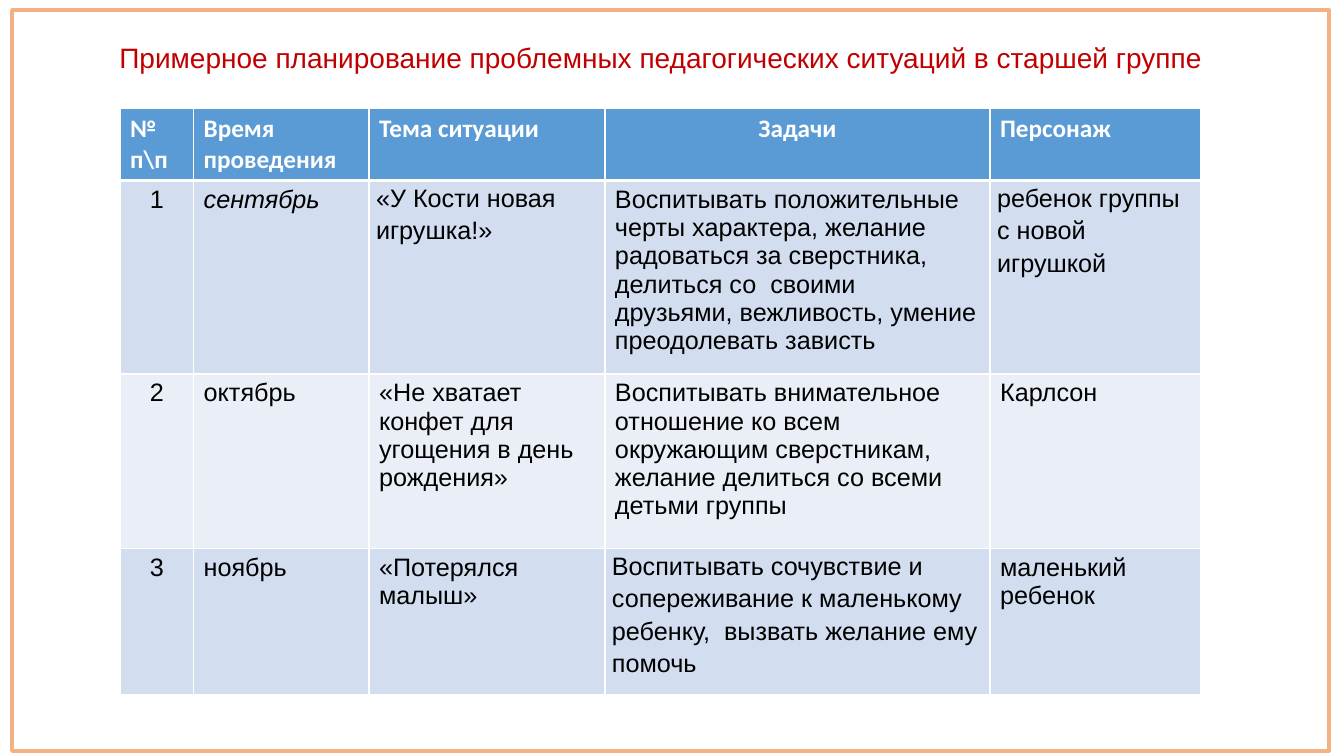
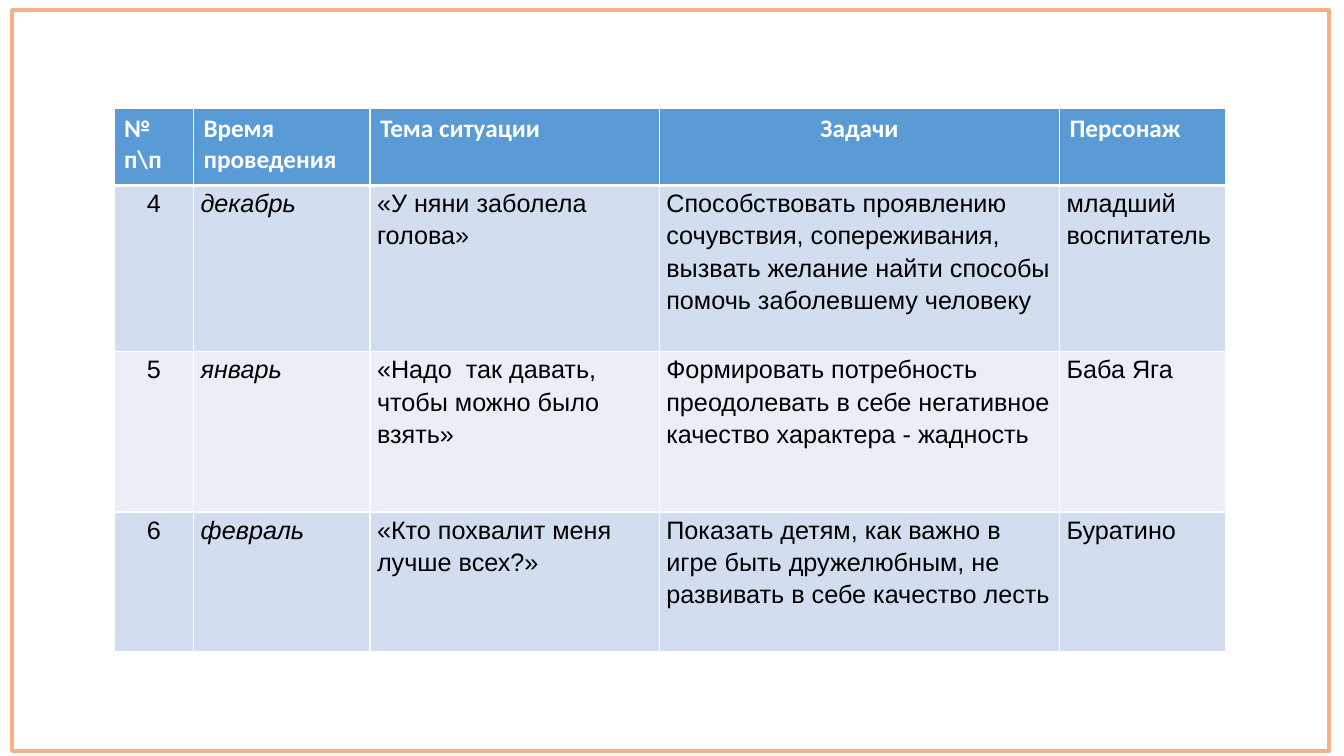
from lxml.etree import SubElement
from pptx import Presentation
from pptx.dml.color import RGBColor
from pptx.enum.shapes import MSO_SHAPE
from pptx.enum.text import MSO_ANCHOR, PP_ALIGN
from pptx.oxml.ns import qn
from pptx.util import Pt

PX = 9144  # 100 px to the inch
TITLE_ONLY, BLANK = 5, 6

WHITE = RGBColor(0xFF, 0xFF, 0xFF)
BLACK = RGBColor(0x00, 0x00, 0x00)
RED = RGBColor(0xC0, 0x00, 0x00)
PEACH = RGBColor(0xF4, 0xB1, 0x83)
HEADER_BLUE = RGBColor(0x5B, 0x9B, 0xD5)
BANDS = [RGBColor(0xD2, 0xDE, 0xEF), RGBColor(0xEA, 0xEF, 0xF7)]

FRAME = (12, 10, 1306, 735)
TITLE_BOX = (102, 35, 1107, 74)
NORMAL_INSETS = (10, 5, 10, 5)
LOOSE_INSETS = (7, 0, 7, 0)
LOOSE_SPACING = 1.15

HEADER = ["№ п\\п", "Время проведения", "Тема ситуации", "Задачи", "Персонаж"]
NUMBER, MONTH, TOPIC, GOALS, CHARACTER = range(len(HEADER))

# "loose" holds the (row, column) cells with wider line spacing and narrower insets
PLANS = [
    {
        "title": "Примерное планирование проблемных педагогических ситуаций в старшей группе",
        "left": 119, "top": 108,
        "columns": [73, 174, 234, 382, 209],
        "rows": [70, 192, 173, 145],
        "italic_rows": {1},
        "loose": {(1, TOPIC), (1, CHARACTER), (3, GOALS)},
        "situations": [
            ("1", "сентябрь", "«У Кости новая игрушка!»",
             "Воспитывать положительные черты характера, желание радоваться за сверстника, "
             "делиться со  своими друзьями, вежливость, умение преодолевать зависть",
             "ребенок группы с новой игрушкой"),
            ("2", "октябрь", "«Не хватает конфет для угощения в день рождения»",
             "Воспитывать внимательное отношение ко всем окружающим сверстникам, "
             "желание делиться со всеми детьми группы",
             "Карлсон"),
            ("3", "ноябрь", "«Потерялся малыш»",
             "Воспитывать сочувствие и сопереживание к маленькому ребенку,  "
             "вызвать желание ему помочь",
             "маленький ребенок"),
        ],
    },
    {
        "title": None,
        "left": 113, "top": 108,
        "columns": [79, 175, 287, 397, 165],
        "rows": [76, 165, 159, 138],
        "italic_rows": {1, 2, 3},
        "loose": {(row, column) for row in (1, 2, 3) for column in range(len(HEADER))},
        "situations": [
            ("4", "декабрь", "«У няни заболела голова»",
             "Способствовать проявлению сочувствия, сопереживания, вызвать желание "
             "найти способы помочь заболевшему человеку",
             "младший воспитатель"),
            ("5", "январь", "«Надо  так давать, чтобы можно было взять»",
             "Формировать потребность преодолевать в себе негативное качество "
             "характера - жадность",
             "Баба Яга"),
            ("6", "февраль", "«Кто похвалит меня лучше всех?»",
             "Показать детям, как важно в игре быть дружелюбным, не развивать "
             "в себе качество лесть",
             "Буратино"),
        ],
    },
]


def emu(lengths):
    return [length * PX for length in lengths]


def style_font(font, name, size, color):
    font.name, font.size, font.color.rgb = name, Pt(size), color


def add_borders(cell, row):
    """Draw white cell edges, with a thick line between header and body."""
    thick_edge = {0: "lnB", 1: "lnT"}.get(row)
    for edge in ("lnL", "lnR", "lnT", "lnB"):
        width = Pt(3 if edge == thick_edge else 1)
        line = SubElement(cell._tc.get_or_add_tcPr(), qn(f"a:{edge}"), w=str(width))
        fill = SubElement(line, qn("a:solidFill"))
        SubElement(fill, qn("a:srgbClr"), val=str(WHITE))


def fill_cell(cell, text, row, column, plan):
    is_header = row == 0
    is_loose = (row, column) in plan["loose"]
    add_borders(cell, row)
    cell.fill.solid()
    cell.fill.fore_color.rgb = HEADER_BLUE if is_header else BANDS[(row - 1) % 2]
    insets = emu(LOOSE_INSETS if is_loose else NORMAL_INSETS)
    cell.margin_left, cell.margin_top, cell.margin_right, cell.margin_bottom = insets

    cell.text = text
    paragraph = cell.text_frame.paragraphs[0]
    if is_loose:
        paragraph.line_spacing = LOOSE_SPACING
    centered = column == GOALS if is_header else column == NUMBER
    paragraph.alignment = PP_ALIGN.CENTER if centered else PP_ALIGN.LEFT
    if is_header:
        style_font(paragraph.font, "Calibri", 18, WHITE)
    else:
        style_font(paragraph.font, "Arial", 18, BLACK)
    paragraph.font.bold = is_header
    paragraph.font.italic = column == MONTH and row in plan["italic_rows"]


def add_plan_table(slide, plan):
    columns, rows = plan["columns"], plan["rows"]
    box = emu((plan["left"], plan["top"], sum(columns), sum(rows)))
    table = slide.shapes.add_table(len(rows), len(columns), *box).table
    for column, width in zip(table.columns, emu(columns)):
        column.width = width
    for row, height in zip(table.rows, emu(rows)):
        row.height = height
    for row, texts in enumerate([HEADER, *plan["situations"]]):
        for column, text in enumerate(texts):
            fill_cell(table.cell(row, column), text, row, column, plan)


def add_frame(slide):
    frame = slide.shapes.add_shape(MSO_SHAPE.RECTANGLE, *emu(FRAME))
    frame.shadow.inherit = False
    frame.fill.background()
    frame.line.color.rgb = PEACH
    frame.line.width = Pt(2.75)


def set_title(slide, text):
    title = slide.shapes.title
    title.left, title.top, title.width, title.height = emu(TITLE_BOX)
    title.text_frame.text = text
    title.text_frame.vertical_anchor = MSO_ANCHOR.TOP
    paragraph = title.text_frame.paragraphs[0]
    paragraph.alignment = PP_ALIGN.CENTER
    style_font(paragraph.font, "Arial", 20, RED)


def main():
    presentation = Presentation()
    presentation.slide_width, presentation.slide_height = emu((1333, 750))
    for plan in PLANS:
        layout = TITLE_ONLY if plan["title"] else BLANK
        slide = presentation.slides.add_slide(presentation.slide_layouts[layout])
        add_plan_table(slide, plan)
        add_frame(slide)
        if plan["title"]:
            set_title(slide, plan["title"])
    presentation.save("out.pptx")


if __name__ == "__main__":
    main()
